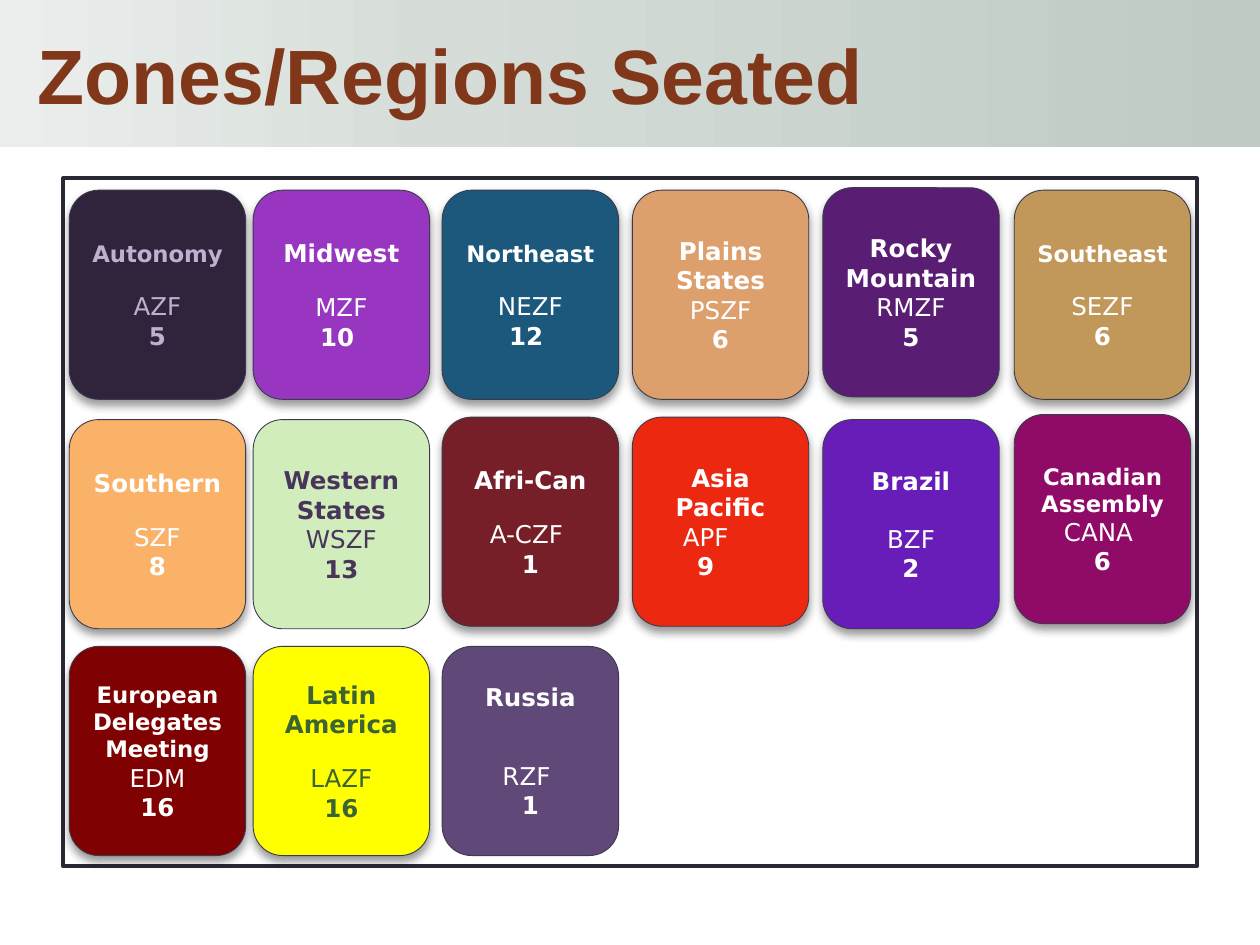
from copy import deepcopy

from lxml import etree
from pptx import Presentation
from pptx.dml.color import RGBColor
from pptx.enum.shapes import MSO_SHAPE
from pptx.enum.text import MSO_ANCHOR, MSO_AUTO_SIZE, PP_ALIGN
from pptx.oxml.ns import qn
from pptx.util import Pt

RECT, ROUND = MSO_SHAPE.RECTANGLE, MSO_SHAPE.ROUNDED_RECTANGLE
MIDDLE, FIT_NONE = MSO_ANCHOR.MIDDLE, MSO_AUTO_SIZE.NONE
LEFT, CENTER = PP_ALIGN.LEFT, PP_ALIGN.CENTER

COLS = [39.6, 144.7, 252.7, 361.4, 470.2, 579.6]
ROWS = [108.7, 239.8, 369.4]
CARD_W, CARD_H = 100.8, 119.5
WHITE = "FFFFFF"

# name lines, code, seats, fill, text colour, name size, gap, lift, shadow
ZONES = [
    [
        (["Autonomy"], "AZF", "5", "30243C", "BFB0CF", 13, 14, 0, True),
        (["Midwest"], "MZF", "10 ", "9836C2", WHITE, 14, 14, 0, True),
        (["Northeast"], "NEZF", "12 ", "1B587C", WHITE, 13, 14, 0, True),
        (["Plains States"], "PSZF", "6", "DDA06D", WHITE, 14, 0, 0, True),
        (["Rocky Mountain"], "RMZF", "5", "591E74", WHITE, 14, 0, 1.4, True),
        (["Southeast"], "SEZF", "6", "C19859", WHITE, 13, 14, 0, True),
    ],
    [
        (["Southern"], "SZF", "8", "F9B268", WHITE, 14, 14, 0, True),
        (["Western States"], "WSZF", "13", "D1EDBB", "48365A", 14, 0, 0, False),
        (["Afri-Can"], "A-CZF ", "1", "771F28", WHITE, 14, 14, 1.4, True),
        (["Asia Pacific"], "APF", "9", "ED2811", WHITE, 14, 0, 1.4, True),
        (["Brazil"], "BZF", "2", "691DB8", WHITE, 14, 16.3, 0, True),
        (["Canadian Assembly"], "CANA ", "6", "900B67", WHITE, 13, 0, 2.9, True),
    ],
    [
        (["European", "Delegates", "Meeting"], "EDM", "16", "7F0101", WHITE,
         13, 0, 0, True),
        (["Latin America"], "LAZF", "16", "FFFF00", "3B6432", 14, 14, 0, True),
        (["Russia"], "RZF ", "1", "604878", WHITE, 14, 28, 0, False),
    ],
]
INDENT = {"APF": 17}


def rgb(code):
    return RGBColor.from_string(code)


def style(par, size, face, color, bold, align):
    par.alignment = align
    for run in par.runs:
        font = run.font
        font.size, font.name, font.bold = Pt(size), face, bold
        font.color.rgb = rgb(color)


def add_box(group, kind, box, fill, line, width):
    shape = group.shapes.add_shape(kind, *map(Pt, box))
    shape.shadow.inherit = False
    shape.fill.solid()
    shape.fill.fore_color.rgb = rgb(fill)
    shape.line.color.rgb = rgb(line)
    shape.line.width = Pt(width)
    return shape


def add_shade(shape):
    effects = shape._element.spPr.find(qn("a:effectLst"))
    shade = etree.SubElement(effects, qn("a:outerShdw"), blurRad=str(Pt(5.2)),
                             dist=str(Pt(3)), dir="5400000", rotWithShape="0")
    color = etree.SubElement(shade, qn("a:srgbClr"), val="000000")
    etree.SubElement(color, qn("a:alpha"), val="40000")


def set_title(slide, box, text):
    title = slide.shapes.title
    title.left, title.top, title.width, title.height = map(Pt, box)
    fill = title.fill
    fill.gradient()
    fill.gradient_angle = 0
    stops = title._element.spPr.find(".//" + qn("a:gsLst"))
    stops.insert(1, deepcopy(stops[0]))
    shades = [("EBEEEC", 0), ("D6DDD9", 0.35), ("BFCAC3", 1)]
    for stop, (color, place) in zip(fill.gradient_stops, shades):
        stop.color.rgb = rgb(color)
        stop.position = place
    frame = title.text_frame
    frame.text = text
    frame.word_wrap = True
    frame.auto_size = FIT_NONE
    frame.vertical_anchor = MIDDLE
    par = frame.paragraphs[0]
    style(par, 44, "Arial", "81381A", True, LEFT)
    props = par._p.get_or_add_pPr()
    props.set("marL", str(Pt(14.4)))
    props.set("indent", "0")


def add_card(group, box, zone):
    names, code, seats, fill, color, size, gap, lift, shaded = zone
    left, top, width, height = box
    card = add_box(group, ROUND, (left, top - lift, width, height),
                   fill, "3B3B4B", 0.5)
    if shaded:
        add_shade(card)
    frame = card.text_frame
    frame.word_wrap = True
    frame.vertical_anchor = MIDDLE
    frame.text = "\n".join([*names, code, seats])
    *heads, mid, last = frame.paragraphs
    for par in heads:
        style(par, size, "DejaVu Sans", color, True, CENTER)
    style(mid, 14, "DejaVu Sans", color, False, CENTER)
    style(last, 14, "DejaVu Sans", color, True, CENTER)
    mid.space_before = Pt(gap)
    if code in INDENT:
        mid._p.get_or_add_pPr().set("marR", str(Pt(INDENT[code])))


def add_grid(slide, box):
    group = slide.shapes.add_group_shape()
    add_box(group, RECT, box, WHITE, "292934", 2.25)
    for top, row in zip(ROWS, ZONES):
        for left, zone in zip(COLS, row):
            add_card(group, (left, top, CARD_W, CARD_H), zone)


def main():
    deck = Presentation()
    deck.slide_width, deck.slide_height = Pt(720), Pt(540)
    slide = deck.slides.add_slide(deck.slide_layouts[5])
    set_title(slide, (0, 0, 720, 84), "Zones/Regions Seated")
    add_grid(slide, (36, 102, 648, 393))
    deck.save("out.pptx")


if __name__ == "__main__":
    main()
